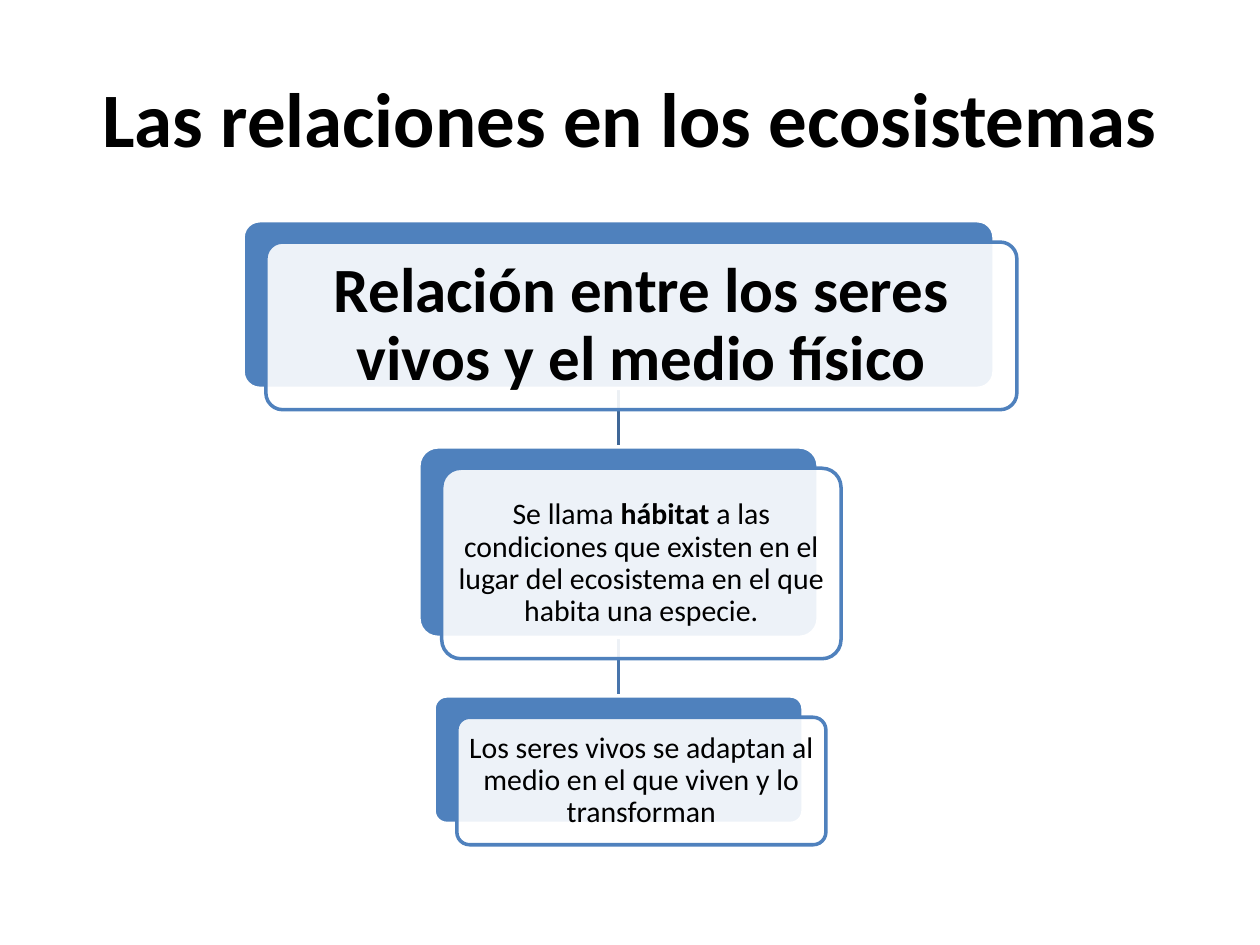
from lxml.etree import SubElement
from pptx import Presentation
from pptx.dml.color import RGBColor
from pptx.enum.shapes import MSO_CONNECTOR as Link, MSO_SHAPE as Shape
from pptx.enum.text import MSO_ANCHOR as Anchor, PP_ALIGN as Align
from pptx.oxml.ns import qn
from pptx.util import Cm, Pt

BLACK = RGBColor(0x00, 0x00, 0x00)
WHITE = RGBColor(0xFF, 0xFF, 0xFF)
BLUE = RGBColor(0x4F, 0x81, 0xBD)
DARK = RGBColor(0x3F, 0x67, 0x97)
MID = RGBColor(0x48, 0x75, 0xAC)
FONT = "Calibri"
ROUND = 0.1
INSET = 0.29 * ROUND  # share of the height a rounded corner takes from the text

# width, height, padding (cm), text size, runs as (text, bold)
CARDS = [
    (15.14, 3.38, 0.38, 36,
     [("Relación entre los seres vivos y el medio físico", True)]),
    (8.05, 3.84, 0.18, 17,
     [("Se llama ", False), ("hábitat ", True),
      ("a las condiciones que existen en el lugar del ecosistema "
       "en el que habita una especie.", False)]),
    (7.44, 2.57, 0.18, 17,
     [("Los seres vivos se adaptan al medio en el que viven y lo transforman",
       False)]),
]
LINKS = [DARK, MID]
GAP = 1.18


def style(par, size):
    par.alignment = Align.CENTER
    par.font.name = FONT
    par.font.size = Pt(size)
    par.font.color.rgb = BLACK


def add_title(slide, left, top, width, height):
    title = slide.shapes.title
    title.left, title.top = Cm(left), Cm(top)
    title.width, title.height = Cm(width), Cm(height)
    frame = title.text_frame
    frame.text = "Las relaciones en los ecosistemas"
    frame.vertical_anchor = Anchor.MIDDLE
    par = frame.paragraphs[0]
    style(par, 44)
    par.font.bold = True


def add_plate(slide, left, top, width, height, fill, line):
    plate = slide.shapes.add_shape(Shape.ROUNDED_RECTANGLE, Cm(left), Cm(top),
                                   Cm(width), Cm(height))
    plate.adjustments[0] = ROUND
    plate.shadow.inherit = False
    plate.fill.solid()
    plate.fill.fore_color.rgb = fill
    plate.line.color.rgb = line
    plate.line.width = Pt(2)
    return plate


def add_card(slide, left, top, width, height, pad, size, runs):
    """Blue plate with a translucent white text plate set off in front."""
    add_plate(slide, left, top, width, height, BLUE, WHITE)
    front = add_plate(slide, left + 0.46, top + 0.43, width, height,
                      WHITE, BLUE)
    color = front.fill._xPr.find(qn("a:solidFill"))[0]
    SubElement(color, qn("a:alpha"), val="90000")

    frame = front.text_frame
    frame.word_wrap = True
    frame.vertical_anchor = Anchor.MIDDLE
    inner = Cm(pad - INSET * height)
    frame.margin_left = frame.margin_right = inner
    frame.margin_top = frame.margin_bottom = inner
    par = frame.paragraphs[0]
    par.line_spacing = 0.9
    style(par, size)
    for text, bold in runs:
        run = par.add_run()
        run.text = text
        run.font.bold = bold


def add_link(slide, mid, top, color):
    link = slide.shapes.add_connector(Link.STRAIGHT, Cm(mid), Cm(top),
                                      Cm(mid), Cm(top + GAP))
    link.line.color.rgb = color
    link.line.width = Pt(2)
    SubElement(link._element.spPr, qn("a:effectLst"))


def add_chain(slide, mid, top):
    """Cards stacked around a centre line, with links behind them."""
    tops = [top]
    for card in CARDS[:-1]:
        tops.append(tops[-1] + card[1] + GAP)
    for start, color in zip(tops[1:], LINKS):
        add_link(slide, mid, start - GAP, color)
    for start, (width, *rest) in zip(tops, CARDS):
        add_card(slide, mid - width / 2, start, width, *rest)


def main():
    deck = Presentation()
    deck.slide_width, deck.slide_height = Cm(25.4), Cm(19.05)
    slide = deck.slides.add_slide(deck.slide_layouts[5])
    add_title(slide, 1.27, 0.76, 22.86, 3.18)
    add_chain(slide, 12.47, 4.45)
    deck.save("out.pptx")


if __name__ == "__main__":
    main()
